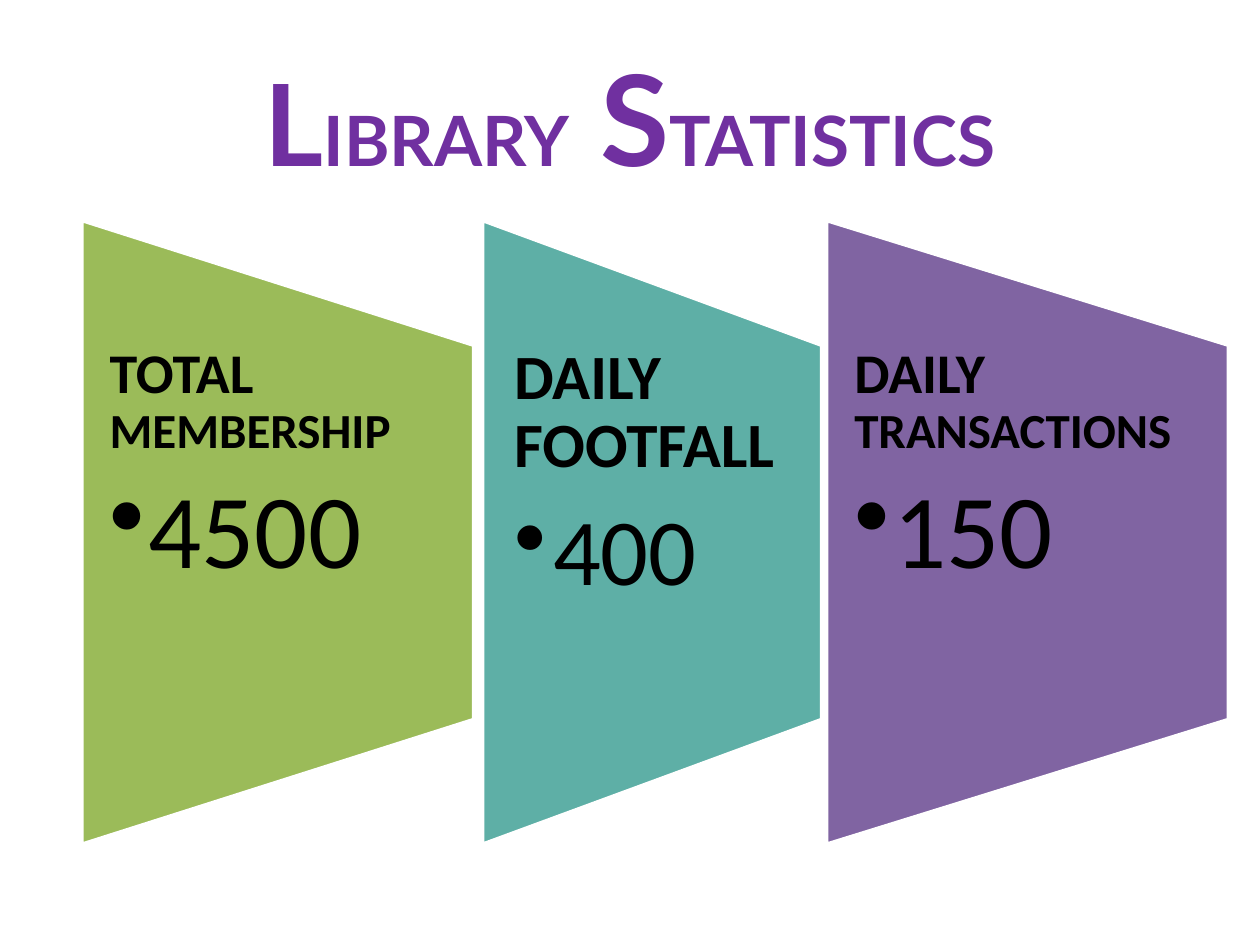
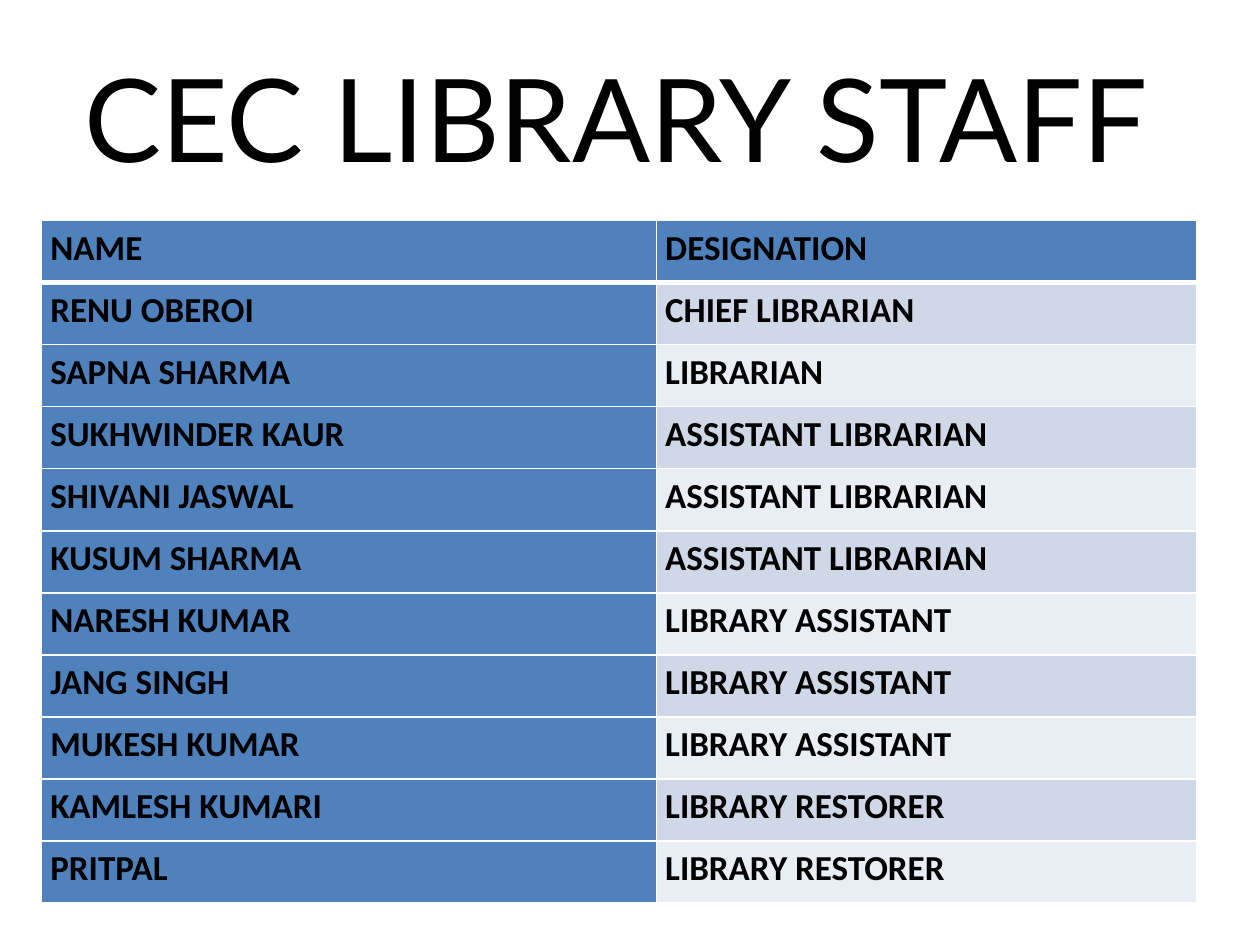
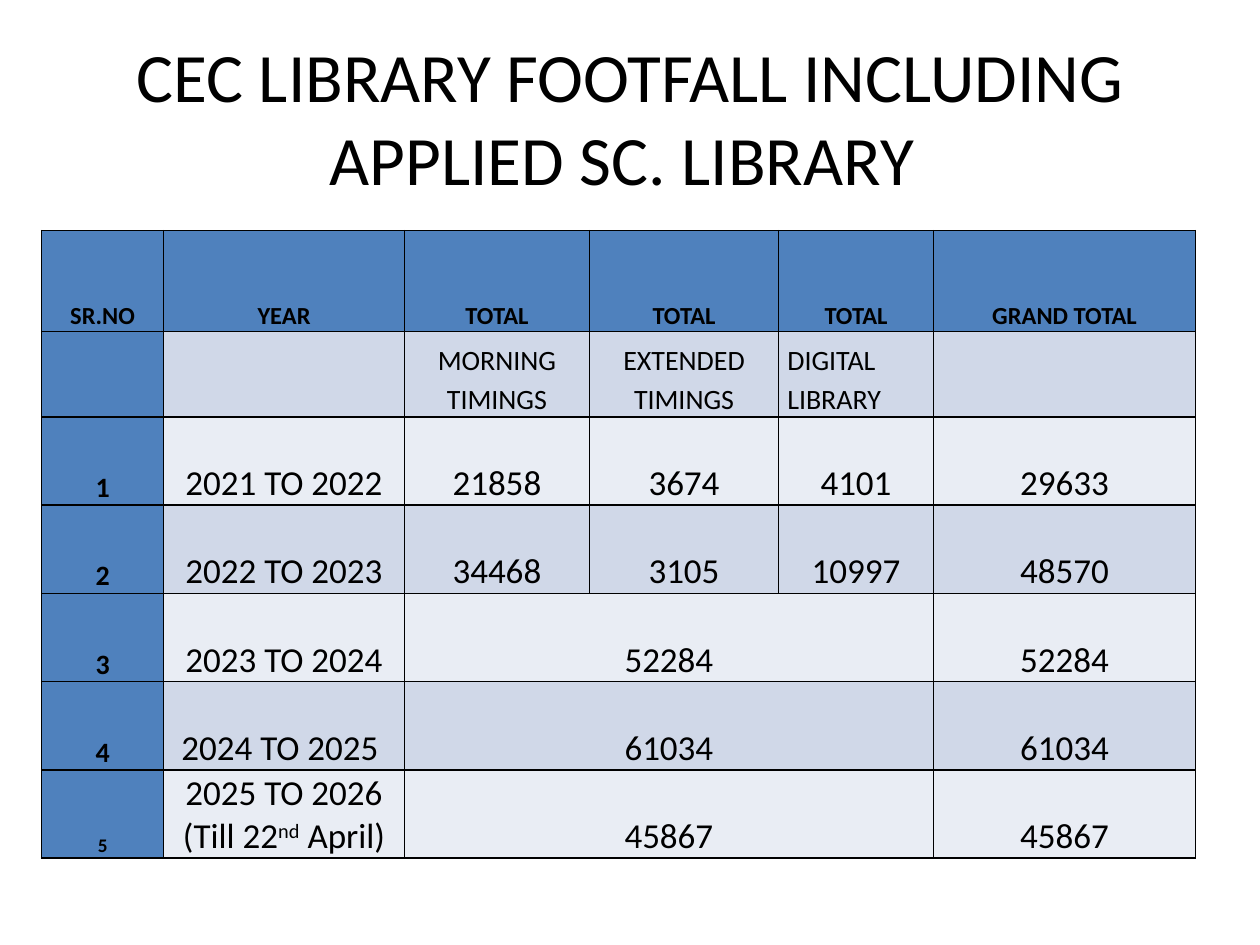
from typing import NamedTuple

from lxml.etree import SubElement
from pptx import Presentation
from pptx.dml.color import RGBColor
from pptx.enum.shapes import MSO_SHAPE
from pptx.enum.text import MSO_ANCHOR, MSO_AUTO_SIZE, PP_ALIGN
from pptx.oxml.ns import qn
from pptx.slide import Slide
from pptx.table import Table, _Cell
from pptx.text.text import _Paragraph
from pptx.util import Inches, Pt

BLACK = RGBColor(0x00, 0x00, 0x00)
WHITE = RGBColor(0xFF, 0xFF, 0xFF)
PURPLE = RGBColor(0x70, 0x30, 0xA0)
GREEN = RGBColor(0x9B, 0xBB, 0x59)
TEAL = RGBColor(0x5E, 0xAF, 0xA6)
VIOLET = RGBColor(0x80, 0x64, 0xA2)
BLUE = RGBColor(0x4F, 0x81, 0xBD)
BAND_DARK = RGBColor(0xD0, 0xD8, 0xE8)
BAND_LIGHT = RGBColor(0xE9, 0xED, 0xF4)

BODY_FONT = "Calibri"
TITLE_FONT = "Lato"
TITLE_ONLY = 5
TABLE_LEFT = 0.33
PANEL_TOP = 1.75
PANEL_HEIGHT = 4.95
PANEL_TEXT_TOP = 2.74
PANEL_TEXT_HEIGHT = 2.97
BULLET_INDENT = Inches(0.31)


class Run(NamedTuple):
    text: str
    size: float
    bold: bool = False
    color: RGBColor = BLACK
    font: str = BODY_FONT
    superscript: bool = False


class Panel(NamedTuple):
    left: float
    width: float
    inset: float
    fill: RGBColor
    heading: list[Run]
    value: Run


class Border(NamedTuple):
    color: RGBColor
    width: float


PANELS = [
    Panel(0.65, 3.11, 0.22, GREEN,
          [Run("TOTAL ", 32, True), Run("MEMBERSHIP", 28, True)], Run("4500", 60)),
    Panel(3.83, 2.69, 0.25, TEAL, [Run("DAILY FOOTFALL", 36, True)], Run("400", 54)),
    Panel(6.56, 3.19, 0.22, VIOLET,
          [Run("DAILY ", 32, True), Run("TRANSACTIONS", 28, True)], Run("150", 60)),
]

STAFF = [
    ("NAME", "DESIGNATION"),
    ("RENU OBEROI", "CHIEF LIBRARIAN"),
    ("SAPNA SHARMA", "LIBRARIAN"),
    ("SUKHWINDER KAUR", "ASSISTANT LIBRARIAN"),
    ("SHIVANI JASWAL", "ASSISTANT LIBRARIAN"),
    ("KUSUM SHARMA", "ASSISTANT LIBRARIAN"),
    ("NARESH KUMAR", "LIBRARY ASSISTANT"),
    ("JANG SINGH", "LIBRARY ASSISTANT"),
    ("MUKESH KUMAR", "LIBRARY ASSISTANT"),
    ("KAMLESH KUMARI", "LIBRARY RESTORER"),
    ("PRITPAL", "LIBRARY RESTORER"),
]

FOOTFALL = [
    ("SR.NO", "YEAR", "TOTAL", "TOTAL", "TOTAL", "GRAND TOTAL"),
    ("", "", "MORNING TIMINGS", "EXTENDED TIMINGS", "DIGITAL LIBRARY", ""),
    ("1", "2021 TO 2022", "21858", "3674", "4101", "29633"),
    ("2", "2022 TO 2023", "34468", "3105", "10997", "48570"),
    ("3", "2023 TO 2024", "52284", None, None, "52284"),
    ("4", "2024 TO 2025 ", "61034", None, None, "61034"),
    ("5", "2025 TO 2026 (Till 22^nd^ April)", "45867", None, None, "45867"),
]
FIRST_MERGED_ROW = 4


def add_runs(paragraph: _Paragraph, runs: list[Run]) -> None:
    for item in runs:
        run = paragraph.add_run()
        run.text = item.text
        run.font.size = Pt(item.size)
        run.font.bold = item.bold
        run.font.name = item.font
        run.font.color.rgb = item.color
        if item.superscript:
            run._r.get_or_add_rPr().set("baseline", "30000")


def add_titled_slide(deck: Presentation, runs: list[Run]) -> Slide:
    slide = deck.slides.add_slide(deck.slide_layouts[TITLE_ONLY])
    title = slide.shapes.title
    title.left, title.top = Inches(0.5), Inches(0.3)
    title.width, title.height = Inches(9), Inches(1.25)
    frame = title.text_frame
    frame.auto_size = MSO_AUTO_SIZE.NONE
    frame.vertical_anchor = MSO_ANCHOR.MIDDLE
    frame.paragraphs[0].alignment = PP_ALIGN.CENTER
    add_runs(frame.paragraphs[0], runs)
    return slide


def add_panel(slide: Slide, panel: Panel) -> None:
    center_x = panel.left + panel.width / 2
    center_y = PANEL_TOP + PANEL_HEIGHT / 2
    trapezoid = slide.shapes.add_shape(
        MSO_SHAPE.FLOWCHART_MANUAL_OPERATION,
        Inches(center_x - PANEL_HEIGHT / 2), Inches(center_y - panel.width / 2),
        Inches(PANEL_HEIGHT), Inches(panel.width))
    trapezoid.rotation = 270
    trapezoid.shadow.inherit = False
    trapezoid.fill.solid()
    trapezoid.fill.fore_color.rgb = panel.fill
    trapezoid.line.color.rgb = WHITE
    trapezoid.line.width = Pt(2)

    frame = slide.shapes.add_textbox(
        Inches(panel.left), Inches(PANEL_TEXT_TOP),
        Inches(panel.width), Inches(PANEL_TEXT_HEIGHT)).text_frame
    frame.word_wrap = True
    frame.margin_left = frame.margin_right = Inches(panel.inset)
    frame.margin_top = frame.margin_bottom = 0
    heading = frame.paragraphs[0]
    heading.line_spacing = 0.9
    heading.space_after = Pt(0.35 * panel.heading[0].size)
    add_runs(heading, panel.heading)

    value = frame.add_paragraph()
    value.level = 1
    value.line_spacing = 0.9
    properties = value._p.get_or_add_pPr()
    properties.set("marL", str(BULLET_INDENT))
    properties.set("indent", str(-BULLET_INDENT))
    SubElement(properties, qn("a:buChar")).set("char", "•")
    add_runs(value, [panel.value])


def set_borders(cell: _Cell, border: Border, top: float, bottom: float) -> None:
    properties = cell._tc.get_or_add_tcPr()
    widths = {"a:lnL": border.width, "a:lnR": border.width, "a:lnT": top, "a:lnB": bottom}
    for side, width in widths.items():
        line = SubElement(properties, qn(side), w=str(Pt(width)))
        fill = SubElement(line, qn("a:solidFill"))
        SubElement(fill, qn("a:srgbClr"), val=str(border.color))


def add_grid(slide: Slide, top: float, widths: list[float], heights: list[float],
             border: Border, header_line: float) -> Table:
    table = slide.shapes.add_table(
        len(heights), len(widths), Inches(TABLE_LEFT), Inches(top),
        Inches(sum(widths)), Inches(sum(heights))).table
    for column, width in zip(table.columns, widths):
        column.width = Inches(width)
    for r, height in enumerate(heights):
        table.rows[r].height = Inches(height)
        for c, cell in enumerate(table.rows[r].cells):
            cell.margin_left = cell.margin_right = Inches(0.07)
            cell.margin_top = cell.margin_bottom = 0
            set_borders(cell, border,
                        header_line if r == 1 else border.width,
                        header_line if r == 0 else border.width)
            cell.fill.solid()
            band = BAND_DARK if r % 2 else BAND_LIGHT
            cell.fill.fore_color.rgb = BLUE if r == 0 or c == 0 else band
    return table


def fill_cell(cell: _Cell, text: str, size: float, bold: bool,
              alignment: PP_ALIGN, spacing: float) -> None:
    paragraph = cell.text_frame.paragraphs[0]
    paragraph.alignment = alignment
    paragraph.line_spacing = spacing
    add_runs(paragraph, [Run(part, size, bold, superscript=i % 2 == 1)
                         for i, part in enumerate(text.split("^")) if part])


def build_statistics(deck: Presentation) -> None:
    letters = [("L", 64.8), ("IBRARY", 39.6), (" S", 72), ("TATISTICS", 39.6)]
    slide = add_titled_slide(
        deck, [Run(text, size, True, PURPLE, TITLE_FONT) for text, size in letters])
    for panel in PANELS:
        add_panel(slide, panel)


def build_staff(deck: Presentation) -> None:
    slide = add_titled_slide(deck, [Run("CEC LIBRARY STAFF ", 66, font=TITLE_FONT)])
    table = add_grid(slide, 1.75, [4.88, 4.29], [5.42 / len(STAFF)] * len(STAFF),
                     Border(WHITE, 1), 3)
    for r, row in enumerate(STAFF):
        for c, text in enumerate(row):
            fill_cell(table.cell(r, c), text, 20, True, PP_ALIGN.LEFT, 1.15)


def footfall_size(r: int, c: int) -> float:
    if r == 0:
        return 14
    if c == 0 and r == len(FOOTFALL) - 1:
        return 11
    return 16 if r == 1 or c == 0 else 20


def build_footfall(deck: Presentation) -> None:
    slide = add_titled_slide(
        deck, [Run("CEC LIBRARY FOOTFALL INCLUDING APPLIED SC. LIBRARY ", 39.6)])
    table = add_grid(slide, 1.83, [0.97, 1.91, 1.47, 1.5, 1.23, 2.08],
                     [0.8, 0.68] + [0.7] * 5, Border(BLACK, 1), 1)
    for r, row in enumerate(FOOTFALL):
        if r >= FIRST_MERGED_ROW:
            table.cell(r, 2).merge(table.cell(r, 4))
        for c, text in enumerate(row):
            if text is None:
                continue
            cell = table.cell(r, c)
            cell.vertical_anchor = MSO_ANCHOR.BOTTOM
            alignment = PP_ALIGN.LEFT if (r, c) == (1, 4) else PP_ALIGN.CENTER
            spacing = 1.0 if r >= FIRST_MERGED_ROW and c > 0 else 1.15
            fill_cell(cell, text, footfall_size(r, c), r == 0 or c == 0, alignment, spacing)


def main() -> None:
    deck = Presentation()
    deck.slide_width, deck.slide_height = Inches(10), Inches(7.5)
    build_statistics(deck)
    build_staff(deck)
    build_footfall(deck)
    deck.save("out.pptx")


if __name__ == "__main__":
    main()
